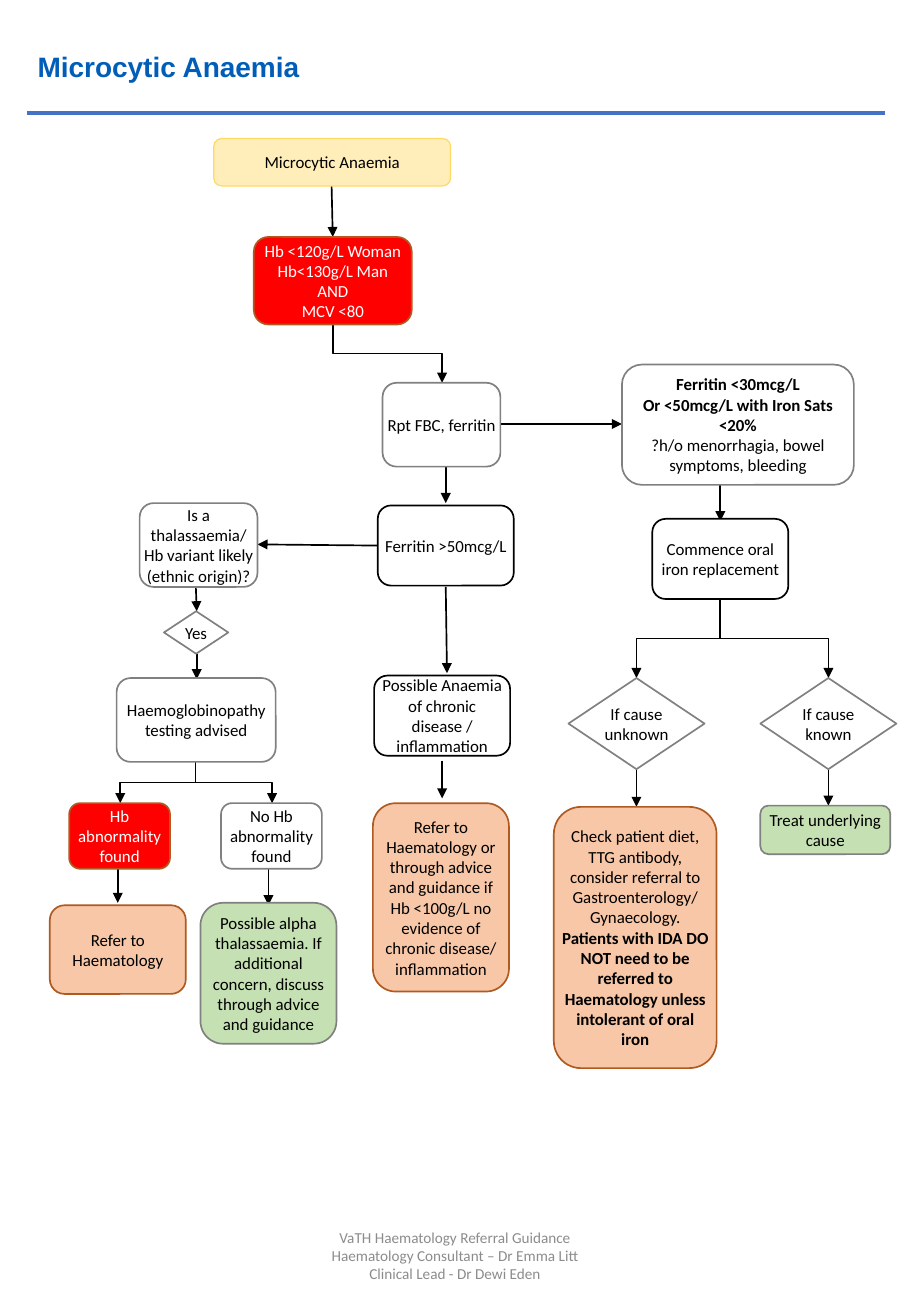
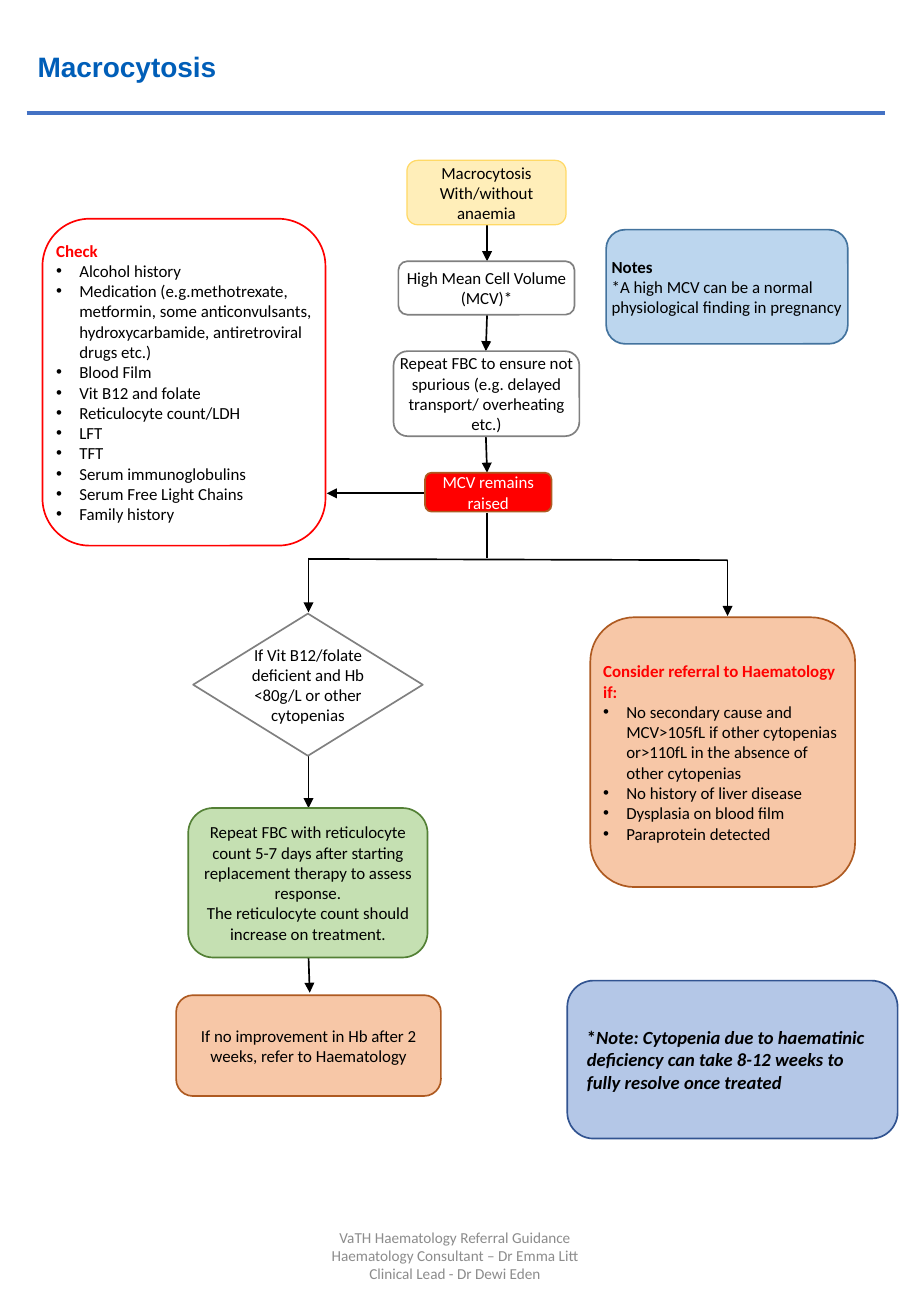
from dataclasses import dataclass
from typing import NamedTuple

from lxml.etree import SubElement
from pptx import Presentation
from pptx.dml.color import RGBColor
from pptx.enum.shapes import MSO_CONNECTOR as Link, MSO_SHAPE as Preset
from pptx.enum.text import MSO_ANCHOR as Anchor, PP_ALIGN as Align
from pptx.oxml.ns import qn
from pptx.util import Inches, Pt

BLACK, WHITE, RED = "000000", "FFFFFF", "FF0000"
TITLE_BLUE, RULE_BLUE, FOOTER_GREY = "005EB8", "4472C4", "8C8C8C"
GREY, RUST = "808080", "AE5A21"
HANGING = 0.19
TITLE_INSETS = (0.08, 0.04)
NO_INSETS = (0, 0)
DEFAULT_INSETS = (0.1, 0.05)


class Look(NamedTuple):
    fill: str
    line: str
    ink: str = BLACK
    weight: float = 1


START = Look("FFEEB9", "FFD966", weight=0.75)
ALERT = Look(RED, RUST, WHITE)
STEP = Look(WHITE, GREY)
KEY_STEP = Look(WHITE, BLACK)
REFER = Look("F7C7A7", RUST)
TREAT = Look("C5E0B2", GREY)
RESPONSE = Look("C5E0B2", "538035")
CHECKLIST = Look(WHITE, RED)
NOTES = Look("BCD6EE", "43739E")
CYTOPENIA = Look("B4C7E7", "325491")


class Para(NamedTuple):
    text: str
    bold: bool = False
    italic: bool = False
    ink: str = ""
    bullet: bool = False
    lead: str = ""


@dataclass
class Node:
    left: float
    top: float
    width: float
    height: float
    look: Look
    paras: list[Para]
    preset: Preset = Preset.ROUNDED_RECTANGLE
    align: Align = Align.CENTER
    insets: tuple[float, float] = NO_INSETS
    size: float = 10


class Arrow(NamedTuple):
    x1: float
    y1: float
    x2: float
    y2: float
    head: bool = True


class Page(NamedTuple):
    title: str
    arrows: list[Arrow]
    elbows: list[Arrow]
    nodes: list[Node]


def plain(*texts: str) -> list[Para]:
    return [Para(text) for text in texts]


def bulleted(heading: str, *items: str) -> list[Para]:
    return [Para(heading, bold=True, ink=RED)] + [Para(item, bullet=True) for item in items]


def rgb(colour: str) -> RGBColor:
    return RGBColor.from_string(colour)


def write(frame, paras: list[Para], size: float, ink: str, align: Align,
          insets: tuple[float, float], font: str = "Calibri") -> None:
    frame.word_wrap = True
    frame.vertical_anchor = Anchor.MIDDLE
    frame.margin_left = frame.margin_right = Inches(insets[0])
    frame.margin_top = frame.margin_bottom = Inches(insets[1])
    frame.text = "\n".join(para.lead or para.text for para in paras)
    for para, paragraph in zip(paras, frame.paragraphs):
        paragraph.alignment = align
        if para.lead:
            paragraph.add_run().text = para.text
        for run in paragraph.runs:
            run.font.name, run.font.size = font, Pt(size)
            run.font.bold = para.bold
            run.font.italic = para.italic and run.text != para.lead
            run.font.color.rgb = rgb(para.ink or ink)
        if para.bullet:
            props = paragraph._p.get_or_add_pPr()
            props.set("marL", str(Inches(HANGING)))
            props.set("indent", str(-Inches(HANGING)))
            SubElement(props, qn("a:buFont")).set("typeface", "Arial")
            SubElement(props, qn("a:buChar")).set("char", "•")


def draw_node(slide, node: Node) -> None:
    shape = slide.shapes.add_shape(
        node.preset, *map(Inches, (node.left, node.top, node.width, node.height)))
    shape.shadow.inherit = False
    shape.fill.solid()
    shape.fill.fore_color.rgb = rgb(node.look.fill)
    shape.line.color.rgb = rgb(node.look.line)
    shape.line.width = Pt(node.look.weight)
    write(shape.text_frame, node.paras, node.size, node.look.ink, node.align, node.insets)


def draw_line(slide, arrow: Arrow, colour: str = BLACK, weight: float = 1,
              kind: Link = Link.STRAIGHT):
    ends = map(Inches, (arrow.x1, arrow.y1, arrow.x2, arrow.y2))
    connector = slide.shapes.add_connector(kind, *ends)
    connector.line.color.rgb = rgb(colour)
    connector.line.width = Pt(weight)
    props = connector._element.spPr
    if arrow.head:
        SubElement(props.find(qn("a:ln")), qn("a:tailEnd")).set("type", "triangle")
    SubElement(props, qn("a:effectLst"))
    return connector


def draw_elbow(slide, arrow: Arrow) -> None:
    mid_x, mid_y = (arrow.x1 + arrow.x2) / 2, (arrow.y1 + arrow.y2) / 2
    half_drop, half_run = (arrow.y2 - arrow.y1) / 2, abs(arrow.x2 - arrow.x1) / 2
    rightward = arrow.x2 > arrow.x1
    side = half_drop if rightward else -half_drop
    turned = Arrow(mid_x + side, mid_y - half_run, mid_x - side, mid_y + half_run)
    connector = draw_line(slide, turned, kind=Link.ELBOW)
    connector._element.spPr.find(qn("a:xfrm")).set("rot", str((270 if rightward else 90) * 60000))


def draw_text(slide, area: tuple[float, float, float, float], *style) -> None:
    write(slide.shapes.add_textbox(*map(Inches, area)).text_frame, *style)


def draw_page(deck, page: Page) -> None:
    slide = deck.slides.add_slide(deck.slide_layouts[6])
    draw_text(slide, (0.23, 0.21, 5.24, 0.67), [Para(page.title, bold=True)],
              16.6, TITLE_BLUE, Align.LEFT, TITLE_INSETS, "Arial")
    draw_line(slide, Arrow(0.22, 0.93, 7.29, 0.93, False), RULE_BLUE, 2.75)
    for arrow in page.arrows:
        draw_line(slide, arrow)
    for elbow in page.elbows:
        draw_elbow(slide, elbow)
    for node in page.nodes:
        draw_node(slide, node)
    draw_text(slide, (2.48, 10.04, 2.53, 0.58),
              plain("VaTH Haematology Referral Guidance",
                    "Haematology Consultant – Dr Emma Litt Clinical Lead - Dr Dewi Eden"),
              9, FOOTER_GREY, Align.CENTER, DEFAULT_INSETS)


MICROCYTIC = Page(
    "Microcytic Anaemia",
    arrows=[
        Arrow(2.73, 1.53, 2.74, 1.95),
        Arrow(4.12, 3.49, 5.12, 3.49),
        Arrow(3.67, 3.84, 3.67, 4.14),
        Arrow(3.11, 4.49, 2.12, 4.48),
        Arrow(1.61, 4.77, 1.62, 5.03),
        Arrow(1.62, 5.38, 1.62, 5.59),
        Arrow(0.97, 7.13, 0.97, 7.43),
        Arrow(2.21, 7.14, 2.21, 7.45),
        Arrow(3.67, 4.83, 3.68, 5.54),
        Arrow(3.64, 6.26, 3.64, 6.57),
        Arrow(5.93, 3.99, 5.93, 4.29),
        Arrow(5.24, 6.34, 5.24, 6.64),
        Arrow(6.82, 6.33, 6.82, 6.63),
    ],
    elbows=[
        Arrow(2.74, 2.67, 3.64, 3.15),
        Arrow(1.61, 6.27, 2.24, 6.61),
        Arrow(1.61, 6.27, 0.99, 6.61),
        Arrow(5.93, 4.93, 6.82, 5.58),
        Arrow(5.93, 4.93, 5.24, 5.58),
    ],
    nodes=[
        Node(1.76, 1.14, 1.95, 0.39, START, plain("Microcytic Anaemia")),
        Node(2.09, 1.95, 1.3, 0.72, ALERT,
             plain("Hb <120g/L Woman", "Hb<130g/L Man", "AND", "MCV <80")),
        Node(3.15, 3.15, 0.97, 0.69, STEP, plain("Rpt FBC, ferritin")),
        Node(5.12, 3, 1.91, 0.99, STEP,
             [Para("Ferritin <30mcg/L", bold=True),
              Para("Or <50mcg/L with Iron Sats <20%", bold=True),
              Para("?h/o menorrhagia, bowel symptoms, bleeding")]),
        Node(1.15, 4.14, 0.97, 0.69, STEP,
             plain("Is a thalassaemia/ Hb variant likely (ethnic origin)?")),
        Node(3.11, 4.16, 1.12, 0.66, KEY_STEP, plain("Ferritin >50mcg/L")),
        Node(5.37, 4.27, 1.12, 0.66, KEY_STEP, plain("Commence oral iron replacement")),
        Node(1.35, 5.03, 0.53, 0.35, STEP, plain("Yes"), Preset.DIAMOND),
        Node(0.96, 5.58, 1.31, 0.69, STEP, plain("Haemoglobinopathy testing advised")),
        Node(3.08, 5.56, 1.12, 0.66, KEY_STEP,
             plain("Possible Anaemia of chronic disease / inflammation")),
        Node(4.68, 5.58, 1.12, 0.75, STEP, plain("If cause unknown"), Preset.DIAMOND),
        Node(6.26, 5.58, 1.12, 0.75, STEP, plain("If cause known"), Preset.DIAMOND),
        Node(0.57, 6.61, 0.83, 0.54, ALERT, plain("Hb abnormality found")),
        Node(1.82, 6.61, 0.83, 0.54, STEP, plain("No Hb abnormality found")),
        Node(0.41, 7.45, 1.12, 0.73, REFER, plain("Refer to Haematology")),
        Node(1.65, 7.43, 1.12, 1.16, TREAT,
             plain("Possible alpha thalassaemia. If additional concern, "
                   "discuss through advice and guidance")),
        Node(3.07, 6.61, 1.12, 1.55, REFER,
             plain("Refer to Haematology or through advice and guidance if Hb <100g/L "
                   "no evidence of chronic disease/ inflammation")),
        Node(4.56, 6.64, 1.34, 2.15, REFER,
             [Para("Check patient diet, TTG antibody, consider referral to "
                   "Gastroenterology/ Gynaecology."),
              Para("Patients with IDA DO NOT need to be referred to Haematology "
                   "unless intolerant of oral iron", bold=True)]),
        Node(6.26, 6.63, 1.07, 0.4, TREAT, plain("Treat underlying cause")),
    ],
)

MACROCYTOSIS = Page(
    "Macrocytosis",
    arrows=[
        Arrow(4.01, 1.85, 4.01, 2.15),
        Arrow(4.01, 2.59, 4, 2.89),
        Arrow(4, 3.59, 4.01, 3.89),
        Arrow(3.49, 4.06, 2.69, 4.06),
        Arrow(4.01, 4.22, 4.01, 4.59, False),
        Arrow(2.54, 4.6, 5.99, 4.61, False),
        Arrow(2.54, 4.59, 2.54, 5.04),
        Arrow(5.99, 4.61, 5.99, 5.07),
        Arrow(2.54, 6.19, 2.54, 6.65),
        Arrow(2.54, 7.87, 2.55, 8.17),
    ],
    elbows=[],
    nodes=[
        Node(3.35, 1.32, 1.31, 0.53, START, plain("Macrocytosis", "With/without anaemia")),
        Node(3.28, 2.15, 1.45, 0.44, STEP, plain("High Mean Cell Volume (MCV)*")),
        Node(3.24, 2.89, 1.53, 0.7, STEP,
             plain("Repeat FBC to ensure not spurious (e.g. delayed transport/ overheating etc.)")),
        Node(3.5, 3.89, 1.04, 0.32, ALERT, plain("MCV remains raised")),
        Node(0.35, 1.8, 2.33, 2.69, CHECKLIST,
             bulleted("Check", "Alcohol history",
                      "Medication (e.g.methotrexate, metformin, some anticonvulsants, "
                      "hydroxycarbamide, antiretroviral drugs etc.)",
                      "Blood Film", "Vit B12 and folate", "Reticulocyte count/LDH", "LFT", "TFT",
                      "Serum immunoglobulins", "Serum Free Light Chains", "Family history"),
             align=Align.LEFT),
        Node(4.99, 1.89, 1.99, 0.94, NOTES,
             [Para("Notes", bold=True),
              Para("*A high MCV can be a normal physiological finding in pregnancy")],
             align=Align.LEFT),
        Node(1.59, 5.05, 1.89, 1.17, STEP,
             plain("If Vit B12/folate deficient and Hb <80g/L or other cytopenias"),
             Preset.DIAMOND),
        Node(4.86, 5.08, 2.18, 2.22, REFER,
             bulleted("Consider referral to Haematology if:",
                      "No secondary cause and MCV>105fL if other cytopenias or>110fL "
                      "in the absence of other cytopenias",
                      "No history of liver disease", "Dysplasia on blood film",
                      "Paraprotein detected"),
             align=Align.LEFT),
        Node(1.55, 6.65, 1.97, 1.23, RESPONSE,
             plain("Repeat FBC with reticulocyte count 5-7 days after starting "
                   "replacement therapy to assess response.",
                   "The reticulocyte count should increase on treatment.")),
        Node(1.45, 8.19, 2.18, 0.83, REFER,
             plain("If no improvement in Hb after 2 weeks, refer to Haematology")),
        Node(4.67, 8.07, 2.72, 1.3, CYTOPENIA,
             [Para("Note: Cytopenia due to haematinic deficiency can take 8-12 weeks "
                   "to fully resolve once treated", bold=True, italic=True, lead="*")],
             align=Align.LEFT, insets=DEFAULT_INSETS, size=11),
    ],
)


def main() -> None:
    deck = Presentation()
    deck.slide_width, deck.slide_height = Inches(7.5), Inches(10.83)
    for page in (MICROCYTIC, MACROCYTOSIS):
        draw_page(deck, page)
    deck.save("out.pptx")


if __name__ == "__main__":
    main()
